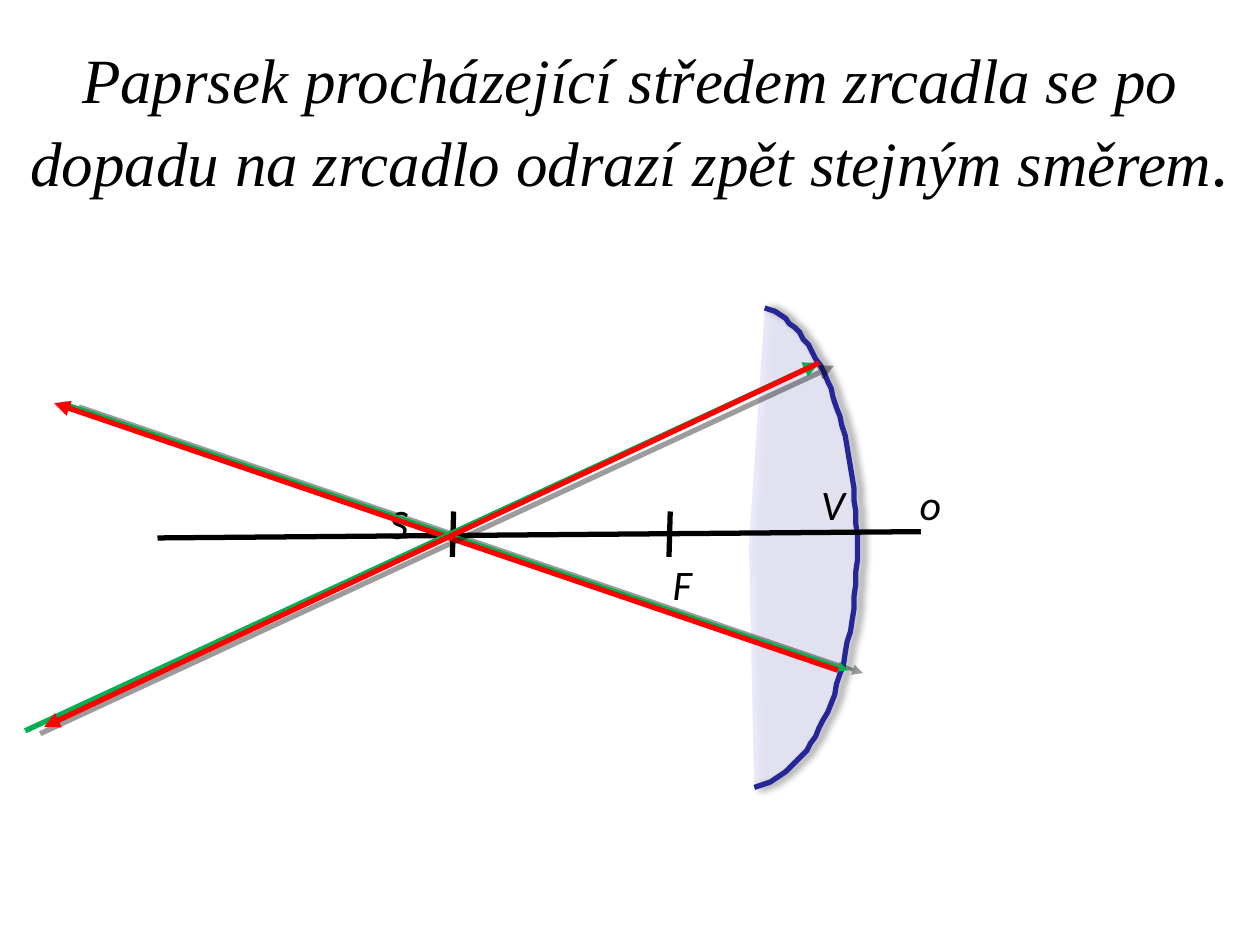
from dataclasses import dataclass

from lxml import etree
from pptx import Presentation
from pptx.dml.color import RGBColor
from pptx.enum import shapes, text
from pptx.oxml import ns
from pptx.util import Pt


@dataclass(frozen=True)
class Theme:
    ink: str = "000000"
    glass: str = "3333CC"
    rim: str = "262699"
    incoming: str = "00B050"
    reflected: str = "FF0000"
    title_font: str = "Times New Roman"
    label_font: str = "Calibri"
    title_size: int = 36
    stop_size: int = 40
    label_size: int = 24


theme = Theme()


def set_effects(part, shadow=None):
    """Replace inherited effects; shadow is (opacity %, blur, distance, degrees)."""
    properties = part._element.spPr
    for old in properties.findall(ns.qn("a:effectLst")):
        properties.remove(old)
    effects = etree.SubElement(properties, ns.qn("a:effectLst"))
    if shadow:
        opacity, blur, distance, degrees = shadow
        outer = etree.SubElement(
            effects, ns.qn("a:outerShdw"), blurRad=str(Pt(blur)),
            dist=str(Pt(distance)), dir=str(degrees * 60000),
            algn="tl", rotWithShape="0")
        color = etree.SubElement(outer, ns.qn("a:srgbClr"), val=theme.ink)
        etree.SubElement(color, ns.qn("a:alpha"), val=str(opacity * 1000))


def add_line(start, end, color, width=3, arrow=False, shadow=None):
    line = slide.shapes.add_connector(
        shapes.MSO_CONNECTOR.STRAIGHT, *(Pt(v) for v in (*start, *end)))
    line.line.color.rgb = RGBColor.from_string(color)
    line.line.width = Pt(width)
    if arrow:
        stroke = line._element.spPr.find(ns.qn("a:ln"))
        etree.SubElement(stroke, ns.qn("a:tailEnd"), type="triangle")
    set_effects(line, shadow)


deck = Presentation()
deck.slide_width, deck.slide_height = Pt(720), Pt(540)
slide = deck.slides.add_slide(deck.slide_layouts[5])

# Statement
statement = slide.shapes.title
statement.left, statement.top, statement.width, statement.height = (
    Pt(0), Pt(0), Pt(720), Pt(138))
frame = statement.text_frame
frame.auto_size = text.MSO_AUTO_SIZE.NONE
frame.vertical_anchor = text.MSO_ANCHOR.MIDDLE
frame.paragraphs[0].alignment = text.PP_ALIGN.CENTER
for words, size in (
    ("Paprsek procházející středem zrcadla se po dopadu na zrcadlo "
     "odrazí zpět stejným směrem", theme.title_size),
    (".", theme.stop_size),
):
    run = frame.paragraphs[0].add_run()
    run.text = words
    run.font.name, run.font.size, run.font.italic = theme.title_font, Pt(size), True
    run.font.color.rgb = RGBColor.from_string(theme.ink)

# Mirror: the rim is two cubic curves, sampled evenly
mirror_top, mirror_vertex, mirror_foot = (437, 175.7), (489.6, 312.5), (430.6, 450)
curves = (
    (mirror_top, (467.3, 186.5), (489.6, 244), mirror_vertex),
    (mirror_vertex, (489.6, 385.2), (463.7, 445.7), mirror_foot),
)
steps = 30
rim_points = [mirror_top]
for a, b, c, d in curves:
    for step in range(1, steps + 1):
        t = step / steps
        s = 1 - t
        rim_points.append(tuple(
            s**3 * a[i] + 3 * s * s * t * b[i] + 3 * s * t * t * c[i] + t**3 * d[i]
            for i in (0, 1)))
mirror_back = (427.7, 312.5)
mirror_shadow = (40, 4, 3, 0)

for points, closed in ((rim_points + [mirror_back], True), (rim_points, False)):
    builder = slide.shapes.build_freeform(*points[0], scale=Pt(1))
    builder.add_line_segments(points[1:], close=closed)
    mirror = builder.convert_to_shape()
    if closed:
        mirror.fill.solid()
        mirror.fill.fore_color.rgb = RGBColor.from_string(theme.glass)
        tint = mirror._element.spPr.find(ns.qn("a:solidFill"))[0]
        etree.SubElement(tint, ns.qn("a:alpha"), val="10000")
        mirror.line.fill.background()
    else:
        mirror.fill.background()
        mirror.line.color.rgb = RGBColor.from_string(theme.rim)
        mirror.line.width = Pt(3)
    set_effects(mirror, mirror_shadow)

# Optical axis with marks at the focus and the centre
add_line((90, 307.4), (526.3, 303.8), theme.ink)
for mark_x in (383, 259.2):
    add_line((mark_x, 292.3), (mark_x - 0.7, 318.2), theme.ink)

# Point labels
for letter, left, top, width in (
    ("o", 518.4, 270, 26.6),
    ("F", 377.3, 315.4, 23),
    ("S", 215.3, 281, 28),
    ("V", 462.2, 270, 23),
):
    label = slide.shapes.add_textbox(Pt(left), Pt(top), Pt(width), Pt(36))
    frame = label.text_frame
    frame.word_wrap = True
    frame.auto_size = text.MSO_AUTO_SIZE.SHAPE_TO_FIT_TEXT
    run = frame.paragraphs[0].add_run()
    run.text = letter
    run.font.name, run.font.size = theme.label_font, Pt(theme.label_size)
    run.font.italic = True
    run.font.color.rgb = RGBColor.from_string(theme.ink)

# Rays: each incoming ray is followed by its reflection
ray_shadow = (38, 0, 8.7, 11)
for source, hit, bounce, exit_point, width in (
    ((36.7, 230.4), (484.6, 383), (478.8, 383), (31, 230.4), 2),
    ((14.4, 417.6), (468, 207.4), (468, 207.4), (25.2, 415.4), 3),
):
    add_line(source, hit, theme.incoming, width, arrow=True, shadow=ray_shadow)
    add_line(bounce, exit_point, theme.reflected, arrow=True)

deck.save("out.pptx")
